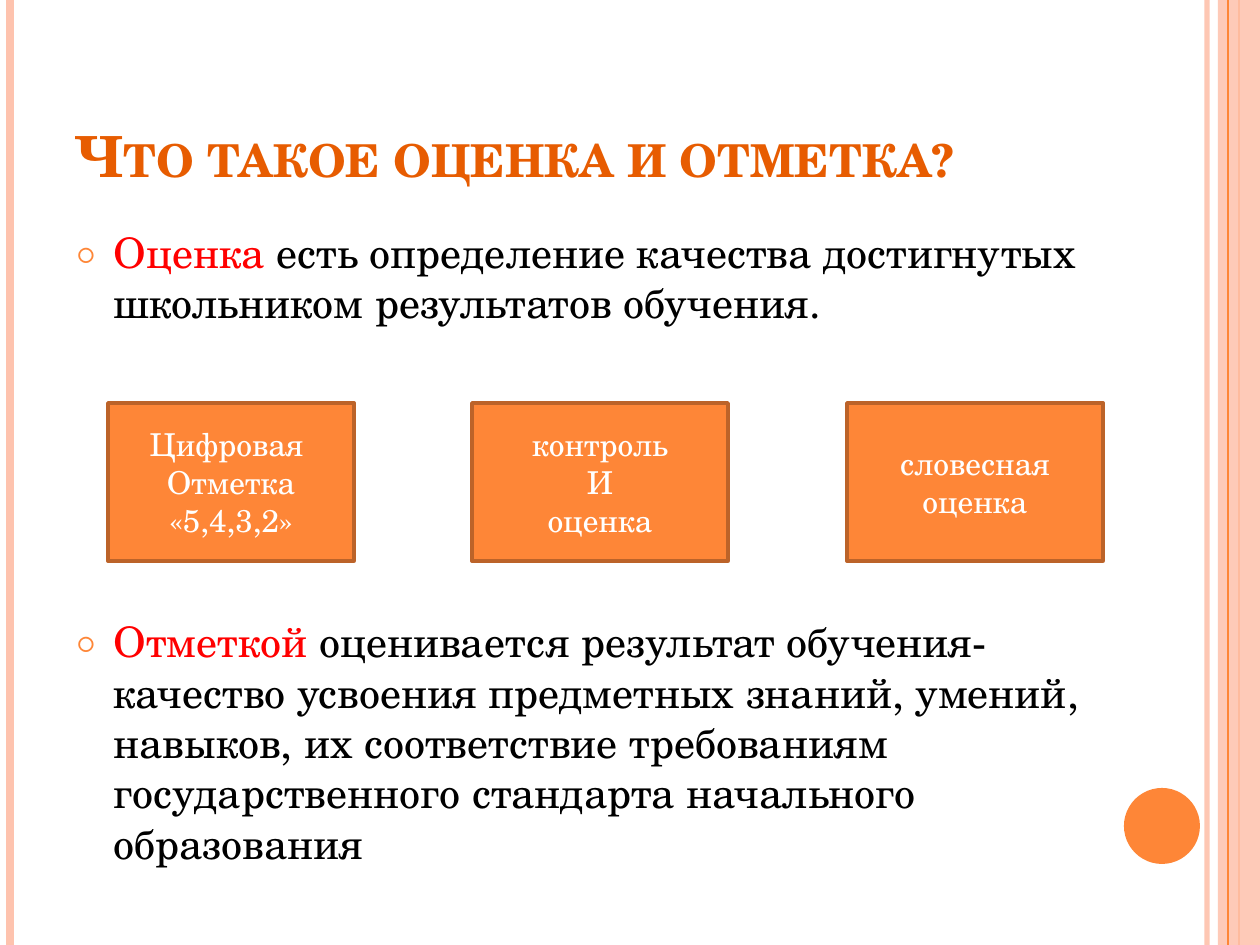
from lxml.etree import SubElement
from pptx import Presentation
from pptx.dml.color import RGBColor
from pptx.enum.shapes import MSO_CONNECTOR, MSO_SHAPE
from pptx.enum.text import MSO_ANCHOR, PP_ALIGN
from pptx.oxml.ns import qn
from pptx.util import Emu, Pt

FONT = "TeX Gyre Schola"
ORANGE = RGBColor(0xFE, 0x86, 0x37)
PEACH = RGBColor(0xFE, 0xC3, 0xAE)
BROWN = RGBColor(0xBC, 0x63, 0x29)
TITLE_ORANGE = RGBColor(0xE7, 0x5C, 0x01)
RED = RGBColor(0xFF, 0, 0)
BLACK = RGBColor(0, 0, 0)
WHITE = RGBColor(0xFF, 0xFF, 0xFF)

WIDTH, HEIGHT = 1260, 945
TITLE = "Что такое оценка и отметка?"
# term, definition, space before in points (the second leaves room for the cards)
DEFINITIONS = [
    ("Оценка ", "есть определение качества достигнутых школьником "
     "результатов обучения.", 6),
    ("Отметкой", " оценивается результат обучения-качество усвоения "
     "предметных знаний, умений, навыков, их соответствие требованиям "
     "государственного стандарта начального образования", 165),
]
# left, width, lines
CARDS = [
    (108, 246, ["Цифровая ", "Отметка", "«5,4,3,2»"]),
    (472, 256, ["контроль", "И", "оценка"]),
    (847, 256, ["словесная оценка"]),
]
CARD_TOP, CARD_HEIGHT = 403, 158
# x, colour, width in points, opacity in percent
STRIPES = [(1207, PEACH, 3, 93), (10, PEACH, 4.5, 100), (1239, ORANGE, 1.5, 100)]
EDGE_STRIPE = (1228, ORANGE, 0.75, 100)


def px(n):
    return Emu(round(n * 914400 / 126))


def set_opacity(parent, percent):
    color = next(parent.iter(qn("a:srgbClr")))
    SubElement(color, qn("a:alpha"), val=str(percent * 1000))


def add_stripe(x, color, width, opacity):
    line = slide.shapes.add_connector(
        MSO_CONNECTOR.STRAIGHT, px(x), 0, px(x), px(HEIGHT))
    line.line.color.rgb = color
    line.line.width = Pt(width)
    if opacity < 100:
        set_opacity(line.line._ln, opacity)
    SubElement(line._element.spPr, qn("a:effectLst"))


def add_box(kind, x, y, w, h, fill, line=None):
    sp = slide.shapes.add_shape(kind, px(x), px(y), px(w), px(h))
    sp.shadow.inherit = False
    sp.fill.solid()
    sp.fill.fore_color.rgb = fill
    if line is None:
        sp.line.fill.background()
    else:
        sp.line.color.rgb = line
        sp.line.width = Pt(2)
    return sp


def add_text_box(x, y, w, h, anchor):
    tf = slide.shapes.add_textbox(px(x), px(y), px(w), px(h)).text_frame
    tf.word_wrap = True
    tf.vertical_anchor = anchor
    return tf


def add_paragraph(tf, first):
    return tf.paragraphs[0] if first else tf.add_paragraph()


def add_run(p, text, size, color, bold=False, small_caps=False):
    r = p.add_run()
    r.text = text
    r.font.name = FONT
    r.font.size = Pt(size)
    r.font.color.rgb = color
    r.font.bold = bold
    if small_caps:
        r.font._element.set("cap", "small")


def add_bullet(p, indent=38):
    pPr = p._p.get_or_add_pPr()
    pPr.set("marL", str(px(indent)))
    pPr.set("indent", str(-px(indent)))
    color = SubElement(pPr, qn("a:buClr"))
    SubElement(color, qn("a:srgbClr"), val=str(ORANGE))
    SubElement(pPr, qn("a:buSzPct"), val="70000")
    SubElement(pPr, qn("a:buFont"), typeface=FONT)
    SubElement(pPr, qn("a:buChar"), char="○")


prs = Presentation()
prs.slide_width, prs.slide_height = px(WIDTH), px(HEIGHT)
slide = prs.slides.add_slide(prs.slide_layouts[6])

for stripe in STRIPES:
    add_stripe(*stripe)
band = add_box(MSO_SHAPE.RECTANGLE, 1218, 0, 42, HEIGHT, PEACH)
set_opacity(band._element.spPr, 87)
add_stripe(*EDGE_STRIPE)
add_box(MSO_SHAPE.OVAL, 1124, 788, 76, 76, ORANGE)

title = add_text_box(63, 38, 1029, 157, MSO_ANCHOR.BOTTOM)
add_run(title.paragraphs[0], TITLE, 32.4, TITLE_ORANGE, bold=True, small_caps=True)

body = add_text_box(63, 220, 1079, 672, MSO_ANCHOR.TOP)
for i, (term, definition, gap) in enumerate(DEFINITIONS):
    p = add_paragraph(body, i == 0)
    p.space_before = Pt(gap)
    add_bullet(p)
    add_run(p, term, 24, RED)
    add_run(p, definition, 24, BLACK)

for left, width, lines in CARDS:
    card = add_box(MSO_SHAPE.RECTANGLE, left, CARD_TOP, width, CARD_HEIGHT,
                   ORANGE, BROWN)
    tf = card.text_frame
    tf.word_wrap = True
    tf.vertical_anchor = MSO_ANCHOR.MIDDLE
    for i, text in enumerate(lines):
        p = add_paragraph(tf, i == 0)
        p.alignment = PP_ALIGN.CENTER
        add_run(p, text, 18, WHITE)

prs.save("out.pptx")
